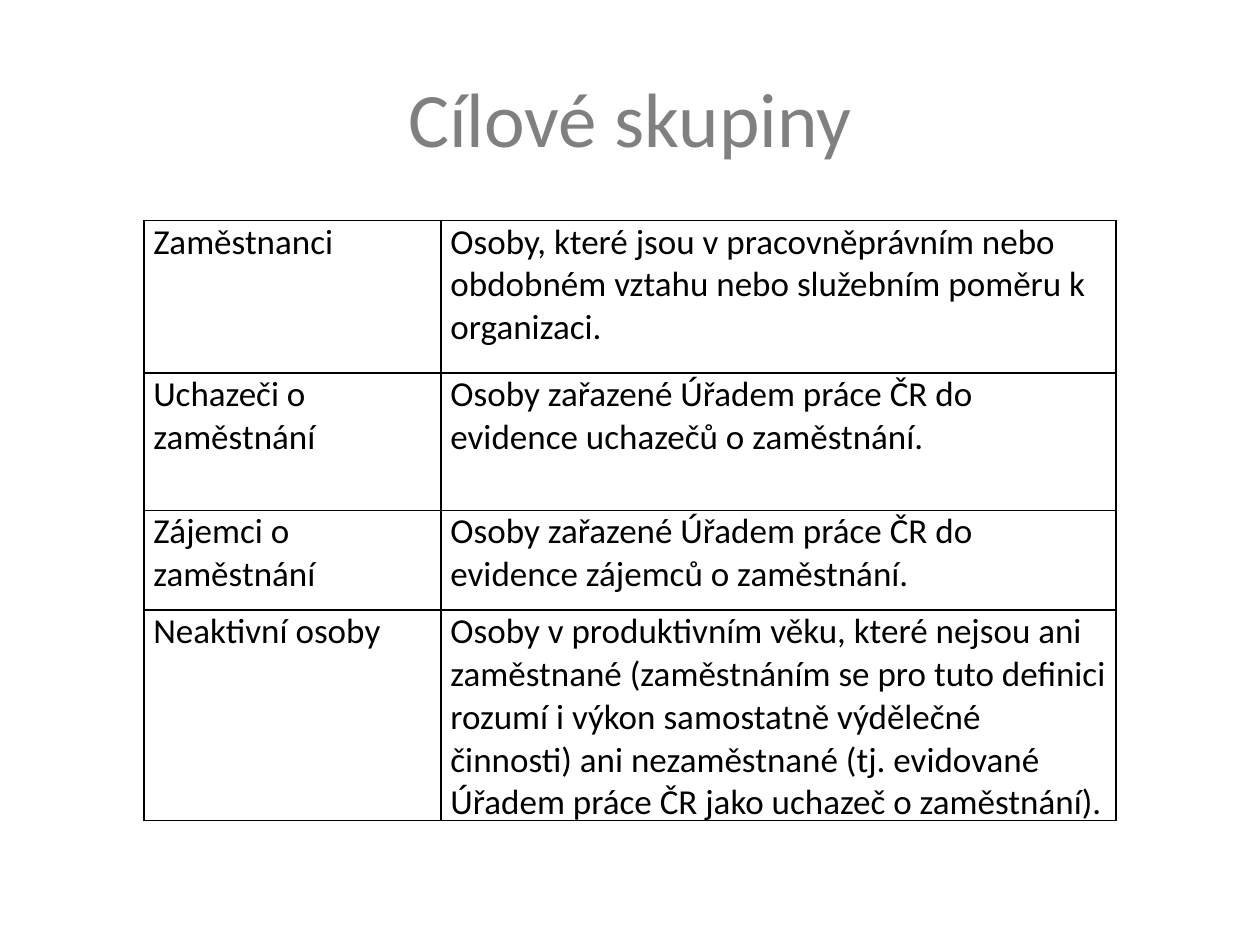
from lxml import etree
from pptx import Presentation
from pptx.dml.color import RGBColor
from pptx.enum.text import MSO_ANCHOR, PP_ALIGN
from pptx.oxml.ns import qn
from pptx.util import Cm, Pt

LEFT, CENTER = PP_ALIGN.LEFT, PP_ALIGN.CENTER
TOP, MIDDLE = MSO_ANCHOR.TOP, MSO_ANCHOR.MIDDLE
BLANK_LAYOUT = 6
FONT = "Calibri"
COLORS = {"title": "808080", "text": "000000", "border": "000000"}

COLUMN_WIDTHS = [5.99, 13.61]
# Each group: name, paragraphs of its definition, row height in cm
TARGET_GROUPS = [
    ("Zaměstnanci",
     ["Osoby, které jsou v pracovněprávním nebo obdobném vztahu nebo "
      "služebním poměru k organizaci."], 3.07),
    ("Uchazeči o zaměstnání",
     ["Osoby zařazené Úřadem práce ČR do",
      "evidence uchazečů o zaměstnání."], 2.77),
    ("Zájemci o zaměstnání",
     ["Osoby zařazené Úřadem práce ČR do evidence zájemců o zaměstnání."],
     2.01),
    ("Neaktivní osoby",
     ["Osoby v produktivním věku, které nejsou ani zaměstnané "
      "(zaměstnáním se pro tuto definici rozumí i výkon samostatně výdělečné "
      "činnosti) ani nezaměstnané (tj. evidované Úřadem práce ČR jako "
      "uchazeč o zaměstnání)."], 4.24),
]


def write_text(frame, paragraphs, size=20, color="text", align=LEFT):
    """Fill a text frame with one formatted run per paragraph."""
    frame.word_wrap = True
    for index, text in enumerate(paragraphs):
        paragraph = frame.paragraphs[0] if index == 0 else frame.add_paragraph()
        paragraph.alignment = align
        run = paragraph.add_run()
        run.text = text
        run.font.name = FONT
        run.font.size = Pt(size)
        run.font.color.rgb = RGBColor.from_string(COLORS[color])


def add_borders(cell, width=1):
    """Draw a solid line on all four sides of a cell."""
    properties = cell._tc.get_or_add_tcPr()
    for position, side in enumerate(("a:lnL", "a:lnR", "a:lnT", "a:lnB")):
        line = etree.Element(qn(side), w=str(Pt(width)))
        fill = etree.SubElement(line, qn("a:solidFill"))
        etree.SubElement(fill, qn("a:srgbClr"), val=COLORS["border"])
        properties.insert(position, line)


def add_title(slide, text):
    title = slide.shapes.add_textbox(Cm(1.27), Cm(0.76), Cm(22.86), Cm(3.18))
    title.text_frame.vertical_anchor = MIDDLE
    write_text(title.text_frame, [text], size=44, color="title", align=CENTER)


def format_cell(cell, paragraphs):
    cell.margin_left = cell.margin_right = Cm(0.19)
    cell.margin_top = cell.margin_bottom = 0
    cell.vertical_anchor = TOP
    cell.fill.background()
    add_borders(cell)
    write_text(cell.text_frame, paragraphs)


def add_groups_table(slide):
    heights = [height for _, _, height in TARGET_GROUPS]
    groups = slide.shapes.add_table(
        len(TARGET_GROUPS), len(COLUMN_WIDTHS), Cm(2.9), Cm(4.45),
        Cm(sum(COLUMN_WIDTHS)), Cm(sum(heights))).table
    groups.first_row = groups.horz_banding = False
    for column, width in zip(groups.columns, COLUMN_WIDTHS):
        column.width = Cm(width)
    for row, (name, definition, height) in zip(groups.rows, TARGET_GROUPS):
        row.height = Cm(height)
        format_cell(row.cells[0], [name])
        format_cell(row.cells[1], definition)


def main():
    presentation = Presentation()
    presentation.slide_width, presentation.slide_height = Cm(25.4), Cm(19.05)
    slide = presentation.slides.add_slide(
        presentation.slide_layouts[BLANK_LAYOUT])

    # Heading
    add_title(slide, "Cílové skupiny")

    # Target groups and their definitions
    add_groups_table(slide)

    presentation.save("out.pptx")


if __name__ == "__main__":
    main()
